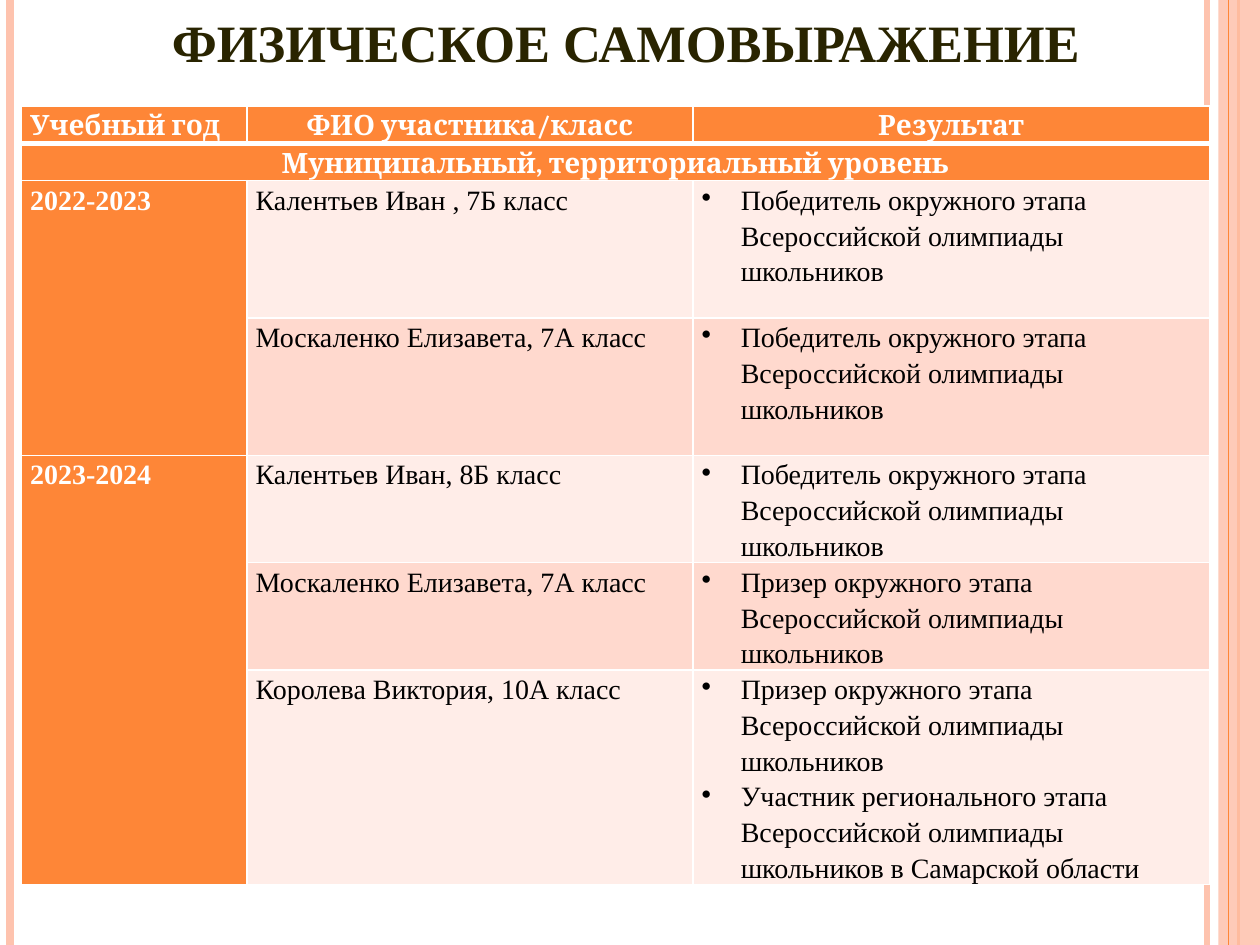
"""Build a slide with a table of school olympiad results by year."""
import lxml.etree
import pptx
import pptx.dml.color
import pptx.enum.shapes
import pptx.enum.text
import pptx.oxml.ns
import pptx.util

Inches = pptx.util.Inches
Pt = pptx.util.Pt
RGBColor = pptx.dml.color.RGBColor
qn = pptx.oxml.ns.qn
CENTER = pptx.enum.text.PP_ALIGN.CENTER

ORANGE = RGBColor(0xFE, 0x86, 0x37)
PEACH = RGBColor(0xFE, 0xC3, 0xAE)
LIGHT = RGBColor(0xFF, 0xED, 0xE8)
PINK = RGBColor(0xFF, 0xD9, 0xCE)
WHITE = RGBColor(0xFF, 0xFF, 0xFF)
BLACK = RGBColor(0, 0, 0)
DARK = RGBColor(0x29, 0x24, 0x00)

SERIF = "Times New Roman"
HEADING = "Cambria"
WINNER = "Победитель окружного этапа Всероссийской олимпиады школьников"
PRIZE = "Призер окружного этапа Всероссийской олимпиады школьников"
REGIONAL = "Участник регионального этапа Всероссийской олимпиады школьников в Самарской области"


def add_stripe(left, color, width):
    stripe = page.shapes.add_connector(
        pptx.enum.shapes.MSO_CONNECTOR.STRAIGHT, Inches(left), 0, Inches(left), deck.slide_height)
    stripe.line.color.rgb = color
    stripe.line.width = Pt(width)
    lxml.etree.SubElement(stripe._element.spPr, qn("a:effectLst"))


def fill_cell(row, column, lines, fill, color=WHITE, font=SERIF, centered=False, bulleted=False):
    cell = table.cell(row, column)
    cell.fill.solid()
    cell.fill.fore_color.rgb = fill
    cell.margin_left = cell.margin_right = Inches(0.07)
    cell.margin_top = cell.margin_bottom = 0
    cell.text_frame.text = "\n".join(lines)
    for para in cell.text_frame.paragraphs:
        para.line_spacing = 1.15
        para.font.size = Pt(16)
        para.font.name = font
        para.font.bold = color == WHITE
        para.font.color.rgb = color
        if centered:
            para.alignment = CENTER
        if bulleted:
            properties = para._p.get_or_add_pPr()
            properties.set("marL", str(Inches(0.31)))
            properties.set("indent", str(-Inches(0.31)))
            bullet = lxml.etree.Element(qn("a:buChar"), char="•")
            properties.find(qn("a:defRPr")).addprevious(bullet)


deck = pptx.Presentation()
deck.slide_width = Inches(10)
deck.slide_height = Inches(7.5)
page = deck.slides.add_slide(deck.slide_layouts[6])

for left, color, width in [(9.58, PEACH, 3), (0.08, PEACH, 4.5), (9.83, ORANGE, 1.5)]:
    add_stripe(left, color, width)
band = page.shapes.add_shape(
    pptx.enum.shapes.MSO_SHAPE.RECTANGLE, Inches(9.67), 0, Inches(0.33), deck.slide_height)
band.shadow.inherit = False
band.fill.solid()
band.fill.fore_color.rgb = PEACH
band.line.fill.background()
band_color = band._element.spPr.find(qn("a:solidFill"))[0]
lxml.etree.SubElement(band_color, qn("a:alpha"), val="87000")
add_stripe(9.75, ORANGE, 0.75)

widths = [1.79, 3.54, 4.1]
heights = [0.3, 0.28, 1.09, 1.09, 0.85, 0.85, 1.7]
table = page.shapes.add_table(
    len(heights), len(widths), Inches(0.17), Inches(0.84),
    Inches(sum(widths)), Inches(sum(heights))).table
for column, width in zip(table.columns, widths):
    column.width = Inches(width)
for row, height in zip(table.rows, heights):
    row.height = Inches(height)

for row in range(len(heights)):
    for column in range(len(widths)):
        properties = table.cell(row, column)._tc.get_or_add_tcPr()
        for side in "LRTB":
            thick = (row, side) in [(0, "B"), (1, "T")]
            border = lxml.etree.SubElement(
                properties, qn("a:ln" + side), w=str(Pt(3 if thick else 1)))
            paint = lxml.etree.SubElement(border, qn("a:solidFill"))
            lxml.etree.SubElement(paint, qn("a:srgbClr"), val=str(WHITE))
        fill_cell(row, column, [], ORANGE)

for column, heading in enumerate(["Учебный год", "ФИО участника/класс", "Результат"]):
    fill_cell(0, column, [heading], ORANGE, font=HEADING, centered=column > 0)
table.cell(1, 0).merge(table.cell(1, 2))
fill_cell(1, 0, ["Муниципальный, территориальный уровень"], ORANGE, font=HEADING, centered=True)
for first, last, year in [(2, 3, "2022-2023"), (4, 6, "2023-2024")]:
    table.cell(first, 0).merge(table.cell(last, 0))
    fill_cell(first, 0, [year], ORANGE)

entries = [
    ("Калентьев Иван , 7Б класс", [WINNER]),
    ("Москаленко Елизавета, 7А класс", [WINNER]),
    ("Калентьев Иван, 8Б класс", [WINNER]),
    ("Москаленко Елизавета, 7А класс", [PRIZE]),
    ("Королева Виктория, 10А класс", [PRIZE, REGIONAL]),
]
for row, (student, results) in enumerate(entries, start=2):
    shade = PINK if row % 2 else LIGHT
    fill_cell(row, 1, [student], shade, BLACK)
    fill_cell(row, 2, results, shade, BLACK, bulleted=True)

title = page.shapes.add_textbox(Inches(0.36), Inches(-0.62), Inches(9.22), Inches(1.25))
title.text_frame.word_wrap = True
title.text_frame.vertical_anchor = pptx.enum.text.MSO_ANCHOR.BOTTOM
para = title.text_frame.paragraphs[0]
para.text = "ФИЗИЧЕСКОЕ САМОВЫРАЖЕНИЕ"
para.alignment = CENTER
para.font.size = Pt(30)
para.font.name = SERIF
para.font.bold = True
para.font.color.rgb = DARK

deck.save("out.pptx")
